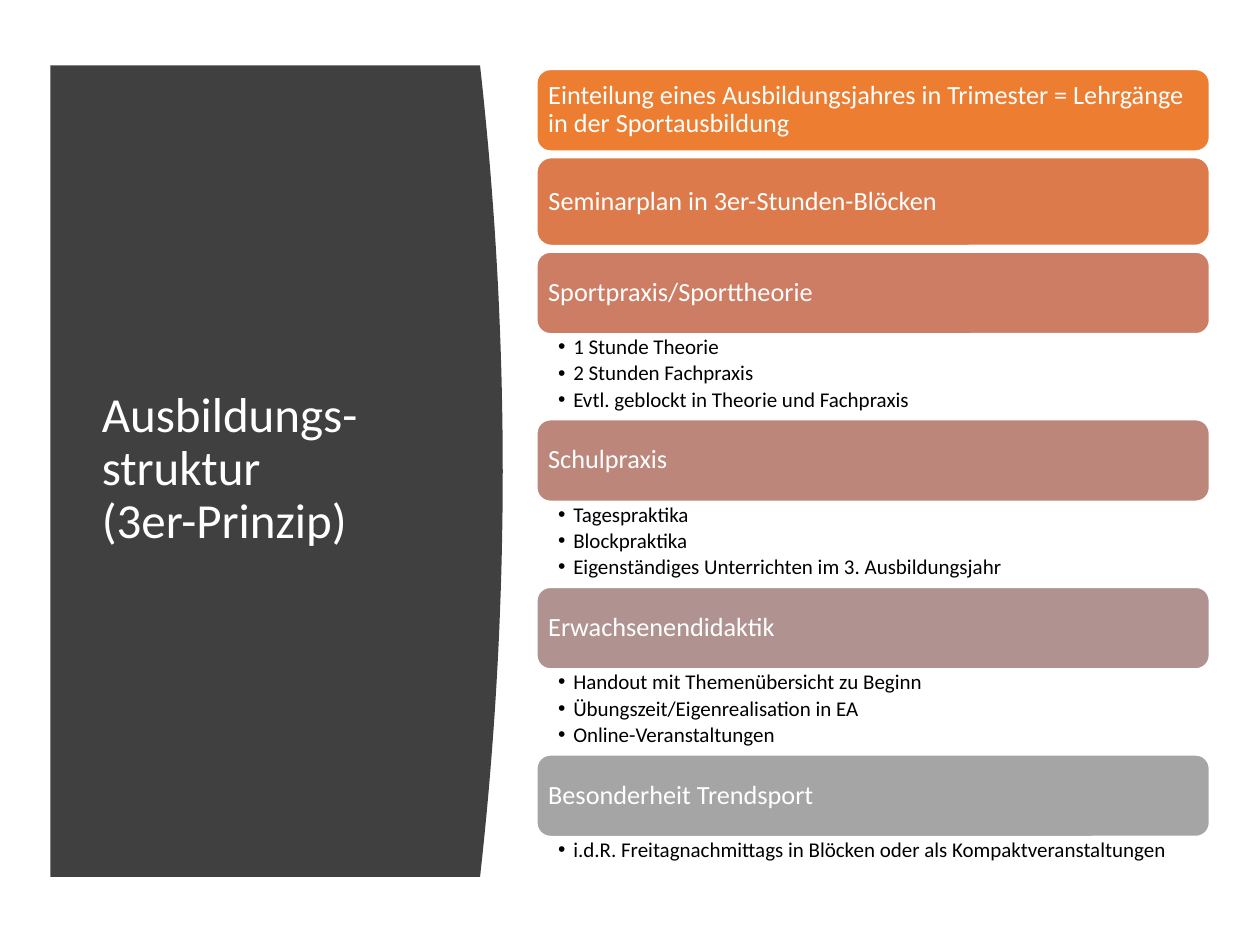
from lxml.etree import SubElement
from pptx import Presentation
from pptx.dml.color import RGBColor
from pptx.enum.shapes import MSO_SHAPE
from pptx.enum.text import MSO_ANCHOR, PP_ALIGN
from pptx.oxml.ns import qn
from pptx.util import Inches, Pt

FONT = "Calibri"
WHITE = "FFFFFF"
GAP = 0.05
TOPICS = [
    ("Einteilung eines Ausbildungsjahres in Trimester = Lehrgänge in der Sportausbildung",
     "ED7D31", 0.65, [], 0),
    ("Seminarplan in 3er-Stunden-Blöcken", "DC7A4B", 0.7, [], 0),
    ("Sportpraxis/Sporttheorie", "CC7D64", 0.65,
     ["1 Stunde Theorie", "2 Stunden Fachpraxis",
      "Evtl. geblockt in Theorie und Fachpraxis"], 0.68),
    ("Schulpraxis", "BD867B", 0.65,
     ["Tagespraktika", "Blockpraktika",
      "Eigenständiges Unterrichten im 3. Ausbildungsjahr"], 0.68),
    ("Erwachsenendidaktik", "B09391", 0.65,
     ["Handout mit Themenübersicht zu Beginn",
      "Übungszeit/Eigenrealisation in EA", "Online-Veranstaltungen"], 0.68),
    ("Besonderheit Trendsport", "A5A5A5", 0.65,
     ["i.d.R. Freitagnachmittags in Blöcken oder als Kompaktveranstaltungen"], 0.27),
]


def color(code):
    return RGBColor.from_string(code)


def apply(item, style):
    for name, value in style.items():
        setattr(item, name, value)


def write(shape, lines, size, code, pads, anchor, after=0):
    frame = shape.text_frame
    sides = ("margin_left", "margin_top", "margin_right", "margin_bottom")
    style = {side: Inches(pad) for side, pad in zip(sides, pads)}
    apply(frame, {**style, "word_wrap": True, "vertical_anchor": anchor})
    for index, line in enumerate(lines):
        para = frame.add_paragraph() if index else frame.paragraphs[0]
        para.text = line
        apply(para, {"line_spacing": 0.9, "space_after": Pt(after),
                     "alignment": PP_ALIGN.LEFT})
        for run in para.runs:
            apply(run.font, {"name": FONT, "size": Pt(size)})
            run.font.color.rgb = color(code)
    return frame


def paint(shape, code):
    shape.shadow.inherit = False
    shape.fill.solid()
    shape.fill.fore_color.rgb = color(code)


def add_panel(slide, left, top, width, height):
    bulge, steps = 0.18, 40
    edge = []
    for step in range(steps + 1):
        part = step / steps
        bend = bulge * (1 - (2 * part - 1) ** 2)
        edge.append((Inches(left + width - bulge + bend), Inches(top + height * part)))
    start = slide.shapes.build_freeform(Inches(left), Inches(top))
    start.add_line_segments(edge + [(Inches(left), Inches(top + height))])
    panel = start.convert_to_shape()
    paint(panel, "404040")
    panel.line.fill.background()
    title = slide.shapes.add_textbox(
        Inches(left + 0.31), Inches(top + 0.59), Inches(2.8), Inches(height - 1.2))
    write(title, ["Ausbildungs-struktur\v(3er-Prinzip)"], 28, WHITE,
          (0.1, 0.05, 0.1, 0.05), MSO_ANCHOR.MIDDLE)


def add_bar(slide, text, code, left, top, width, height):
    bar = slide.shapes.add_shape(
        MSO_SHAPE.ROUNDED_RECTANGLE,
        Inches(left), Inches(top), Inches(width), Inches(height))
    paint(bar, code)
    bar.line.color.rgb = color(WHITE)
    bar.line.width = Pt(1)
    write(bar, [text], 15, WHITE, (0.06,) * 4, MSO_ANCHOR.MIDDLE)


def add_list(slide, lines, left, top, width, height):
    box = slide.shapes.add_textbox(
        Inches(left), Inches(top), Inches(width), Inches(height))
    frame = write(box, lines, 12, "000000", (0.17, 0.02, 0.12, 0.02),
                  MSO_ANCHOR.TOP, 2.1)
    for para in frame.paragraphs:
        para.level = 1
        props = para._p.get_or_add_pPr()
        props.set("marL", str(Inches(0.12)))
        props.set("indent", str(Inches(-0.12)))
        SubElement(props, qn("a:buFont"), typeface="Arial")
        SubElement(props, qn("a:buChar"), char="•")


def add_topics(slide, left, top, width):
    for text, code, height, lines, depth in TOPICS:
        add_bar(slide, text, code, left, top, width, height)
        top += height
        if lines:
            add_list(slide, lines, left, top, width, depth)
        top += depth or GAP


def main():
    deck = Presentation()
    apply(deck, {"slide_width": Inches(10), "slide_height": Inches(7.5)})
    slide = deck.slides.add_slide(deck.slide_layouts[6])
    add_panel(slide, 0.4, 0.52, 3.59, 6.44)
    add_topics(slide, 4.26, 0.55, 5.34)
    deck.save("out.pptx")


if __name__ == "__main__":
    main()
